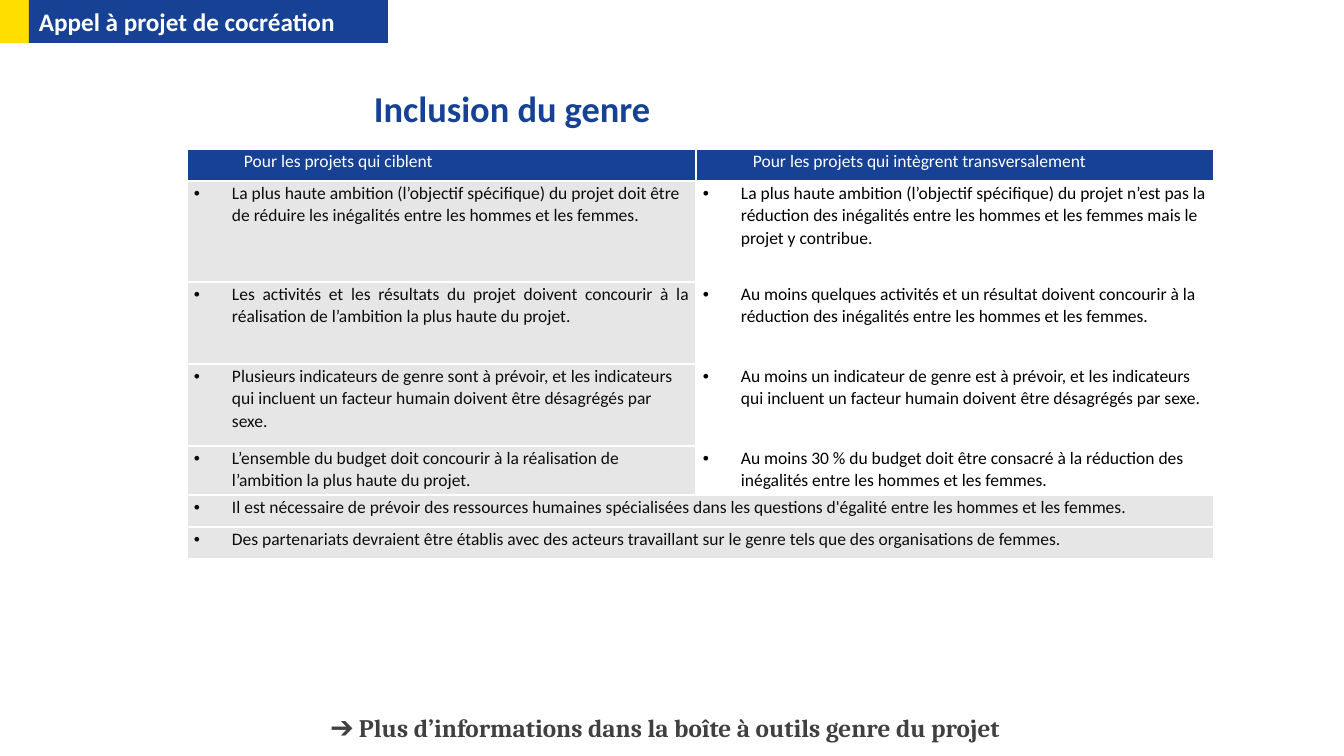
from lxml.etree import SubElement
from pptx import Presentation
from pptx.dml.color import RGBColor
from pptx.enum.shapes import MSO_SHAPE
from pptx.enum.text import MSO_ANCHOR, PP_ALIGN
from pptx.oxml import parse_xml
from pptx.oxml.ns import nsdecls, qn
from pptx.util import Emu, Pt

COLORS = {
    "yellow": "FFDE00",
    "blue": "164194",
    "white": "FFFFFF",
    "gray": "E7E6E6",
    "ink": "0D0D0D",
    "black": "000000",
    "charcoal": "404040",
}
HEADERS = ("Pour les projets qui ciblent", "Pour les projets qui intègrent transversalement")
COMPARISONS = [
    (
        "La plus haute ambition (l’objectif spécifique) du projet doit être de réduire les inégalités entre les hommes et les femmes.",
        "La plus haute ambition (l’objectif spécifique) du projet n’est pas la réduction des inégalités entre les hommes et les femmes mais le projet y contribue.",
    ),
    (
        "Les activités et les résultats du projet doivent concourir à la réalisation de l’ambition la plus haute du projet.",
        "Au moins quelques activités et un résultat doivent concourir à la réduction des inégalités entre les hommes et les femmes.",
    ),
    (
        "Plusieurs indicateurs de genre sont à prévoir, et les indicateurs qui incluent un facteur humain doivent être désagrégés par sexe.",
        "Au moins un indicateur de genre est à prévoir, et les indicateurs qui incluent un facteur humain doivent être désagrégés par sexe.",
    ),
    (
        "L’ensemble du budget doit concourir à la réalisation de l’ambition la plus haute du projet.",
        "Au moins 30 % du budget doit être consacré à la réduction des inégalités entre les hommes et les femmes.",
    ),
]
SHARED = [
    "Il est nécessaire de prévoir des ressources humaines spécialisées dans les questions d'égalité entre les hommes et les femmes.",
    "Des partenariats devraient être établis avec des acteurs travaillant sur le genre tels que des organisations de femmes.",
]
COLUMN_WIDTHS = (509, 518)
ROW_HEIGHTS = (32, 101, 82, 82, 49, 32, 32)
JUSTIFIED_ROW = 2


def px(length):
    return Emu(round(length * 914400 / 100.8))


def color(name):
    return RGBColor.from_string(COLORS[name])


class SlideBuilder:
    """Draws styled elements on the current slide."""

    def __init__(self, page):
        self.page = page

    def style(self, paragraph, text, size, ink, font="Calibri", bold=False):
        paragraph.text = text
        paragraph.font.name = font
        paragraph.font.size = Pt(size)
        paragraph.font.bold = bold
        paragraph.font.color.rgb = color(ink)

    def bar(self, left, top, width, height, fill):
        box = self.page.shapes.add_shape(MSO_SHAPE.RECTANGLE, *map(px, (left, top, width, height)))
        box.shadow.inherit = False
        box.fill.solid()
        box.fill.fore_color.rgb = color(fill)
        box.line.fill.background()
        return box

    def banner(self, left, top, width, height, fill, text):
        frame = self.bar(left, top, width, height, fill).text_frame
        frame.vertical_anchor = MSO_ANCHOR.MIDDLE
        frame.paragraphs[0].alignment = PP_ALIGN.LEFT
        self.style(frame.paragraphs[0], text, 18, "white", bold=True)

    def label(self, left, top, width, height, text, size, ink, font="Calibri"):
        box = self.page.shapes.add_textbox(*map(px, (left, top, width, height)))
        box.text_frame.word_wrap = True
        self.style(box.text_frame.paragraphs[0], text, size, ink, font, bold=True)

    def table(self, left, top, widths, heights):
        frame = self.page.shapes.add_table(
            len(heights), len(widths), *map(px, (left, top, sum(widths), sum(heights)))
        )
        table = frame.table
        table.first_row = table.horz_banding = False
        for column, width in zip(table.columns, widths):
            column.width = px(width)
        for row, height in zip(table.rows, heights):
            row.height = px(height)
        return table

    def cell(self, cell, text, fill, ink, bullet=True, space_after=0, justified=False):
        cell.margin_left = cell.margin_right = px(7)
        cell.margin_top = cell.margin_bottom = 0
        cell.fill.solid()
        cell.fill.fore_color.rgb = color(fill)
        self.borders(cell)
        para = cell.text_frame.paragraphs[0]
        self.style(para, text, 12.5, ink)
        para.line_spacing = 1.07
        para.space_after = Pt(space_after)
        para.alignment = PP_ALIGN.JUSTIFY if justified else PP_ALIGN.LEFT
        self.indent(para, bullet)

    def indent(self, para, bullet):
        properties = para._p.get_or_add_pPr()
        hanging = px(38)
        properties.set("marL", str(hanging if bullet else px(50)))
        properties.set("indent", str(-hanging if bullet else 0))
        if bullet:
            marks = [("a:buFont", "typeface", "Arial"), ("a:buChar", "char", "•")]
            for tag, attribute, value in marks:
                SubElement(properties, qn(tag)).set(attribute, value)

    def borders(self, cell):
        properties = cell._tc.get_or_add_tcPr()
        for position, side in enumerate("LRTB"):
            line = parse_xml(
                f'<a:ln{side} {nsdecls("a")} w="{Pt(1)}"><a:solidFill>'
                f'<a:srgbClr val="{COLORS["white"]}"/></a:solidFill></a:ln{side}>'
            )
            properties.insert(position, line)


def main():
    deck = Presentation()
    deck.slide_width, deck.slide_height = px(1344), px(756)
    builder = SlideBuilder(deck.slides.add_slide(deck.slide_layouts[6]))

    builder.bar(-2, 0, 31, 43, "yellow")
    builder.banner(29, 0, 359, 43, "blue", "Appel à projet de cocréation")
    builder.label(364, 81, 630, 54, "Inclusion du genre", 26, "blue")

    table = builder.table(187, 149, COLUMN_WIDTHS, ROW_HEIGHTS)
    for column, header in enumerate(HEADERS):
        builder.cell(table.cell(0, column), header, "blue", "white", bullet=False, space_after=8 * column)
    for row, (targeted, transversal) in enumerate(COMPARISONS, start=1):
        builder.cell(table.cell(row, 0), targeted, "gray", "ink", justified=row == JUSTIFIED_ROW)
        builder.cell(table.cell(row, 1), transversal, "white", "black", space_after=8)
    for row, text in enumerate(SHARED, start=len(COMPARISONS) + 1):
        table.cell(row, 0).merge(table.cell(row, 1))
        builder.cell(table.cell(row, 0), text, "gray", "ink", space_after=8, justified=True)

    more_information = "➔ Plus d’informations dans la boîte à outils genre du projet"
    builder.label(321, 707, 922, 40, more_information, 18, "charcoal", "Cambria")
    deck.save("out.pptx")


if __name__ == "__main__":
    main()
